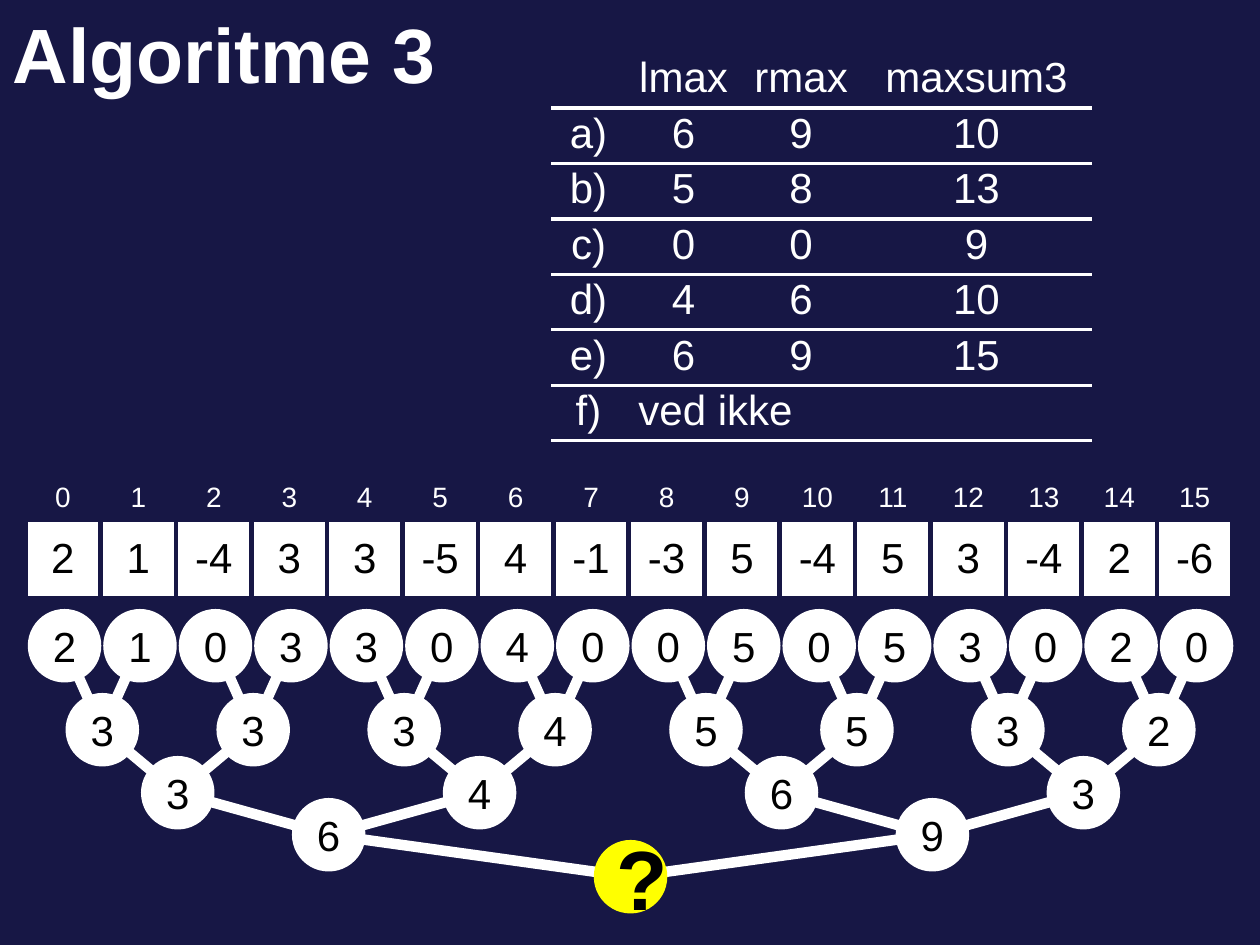
from lxml.etree import SubElement
from pptx import Presentation
from pptx.dml.color import RGBColor
from pptx.enum.shapes import MSO_CONNECTOR as Connector, MSO_SHAPE as Shape
from pptx.enum.text import MSO_ANCHOR as Anchor, PP_ALIGN as Align
from pptx.oxml.ns import qn
from pptx.util import Inches, Pt

NAVY, WHITE, BLACK, YELLOW = "171745", "FFFFFF", "000000", "FFFF00"

ARRAY = [2, 1, -4, 3, 3, -5, 4, -1, -3, 5, -4, 5, 3, -4, 2, -6]
TREE = [
    [max(0, value) for value in ARRAY],
    [3, 3, 3, 4, 5, 5, 3, 2],
    [3, 4, 6, 3],
    [6, 9],
    ["?"],
]
ANSWERS = [
    ["", "lmax", "rmax", "maxsum3"],
    ["a)", 6, 9, 10],
    ["b)", 5, 8, 13],
    ["c)", 0, 0, 9],
    ["d)", 4, 6, 10],
    ["e)", 6, 9, 15],
    ["f)", "ved ikke", "", ""],
]

# Grid units: 120 columns by 90 rows on the slide
ARRAY_LEFT, ARRAY_TOP, ARRAY_WIDTH = 2.4, 42, 115
STEP = ARRAY_WIDTH / len(ARRAY)
NODE = 7
FIRST_CENTER = 6.15
LEVEL_TOPS = [58, 66, 72, 76, 80]


def grid(units):
    return Inches(units / 12)


def color(hex_text):
    return RGBColor.from_string(hex_text)


class SlideBuilder:
    font = "Arial"
    body_size = 24

    def __init__(self, deck, background):
        self.page = deck.slides.add_slide(deck.slide_layouts[5])
        fill = self.page.background.fill
        fill.solid()
        fill.fore_color.rgb = color(background)

    def add_text(self, frame, text, ink, size=body_size, align=Align.CENTER, bold=False):
        para = frame.paragraphs[0]
        para.alignment = align
        span = para.add_run()
        span.text = str(text)
        span.font.name = self.font
        span.font.size = Pt(size)
        span.font.bold = bold
        span.font.color.rgb = color(ink)

    def title(self, text, left, top, width, height):
        box = self.page.shapes.title
        box.left, box.top = grid(left), grid(top)
        box.width, box.height = grid(width), grid(height)
        box.text_frame.vertical_anchor = Anchor.MIDDLE
        self.add_text(box.text_frame, text, WHITE, 44, Align.LEFT, True)

    def group(self):
        return self.page.shapes.add_group_shape().shapes

    def branch(self, shapes, start, end):
        line = shapes.add_connector(Connector.STRAIGHT, *map(grid, (*start, *end)))
        line.line.color.rgb = color(WHITE)
        line.line.width = Pt(6)
        SubElement(line._element.spPr, qn("a:effectLst"))

    def node(self, shapes, center, text, fill=WHITE, **style):
        x, y = center
        circle = shapes.add_shape(
            Shape.OVAL, grid(x - NODE / 2), grid(y - NODE / 2), grid(NODE), grid(NODE))
        circle.shadow.inherit = False
        circle.fill.solid()
        circle.fill.fore_color.rgb = color(fill)
        circle.line.fill.background()
        circle.text_frame.vertical_anchor = Anchor.MIDDLE
        self.add_text(circle.text_frame, text, BLACK, **style)

    def table(self, left, top, widths, row_height, row_count):
        """Add a table without banding, with the given column widths."""
        table = self.page.shapes.add_table(
            row_count, len(widths), grid(left), grid(top),
            grid(sum(widths)), grid(row_height * row_count)).table
        table.first_row = table.horz_banding = False
        for column, width in zip(table.columns, widths):
            column.width = grid(width)
        for row in table.rows:
            row.height = grid(row_height)
        return table

    def cell(self, cell, borders, fill=None, inset=(0.1, 0.05), anchor=Anchor.TOP):
        """Format a cell; borders maps sides (L, R, T, B) to (colour, points)."""
        properties = cell._tc.get_or_add_tcPr()
        for side in "LRTB":
            edge = SubElement(properties, qn(f"a:ln{side}"))
            if side in borders:
                ink, points = borders[side]
                edge.set("w", str(Pt(points)))
                paint = SubElement(edge, qn("a:solidFill"))
                SubElement(paint, qn("a:srgbClr")).set("val", ink)
            else:
                SubElement(edge, qn("a:noFill"))
        if fill:
            cell.fill.solid()
            cell.fill.fore_color.rgb = color(fill)
        else:
            cell.fill.background()
        cell.vertical_anchor = anchor
        cell.margin_left = cell.margin_right = Inches(inset[0])
        cell.margin_top = cell.margin_bottom = Inches(inset[1])


def node_center(level, index):
    x = FIRST_CENTER + STEP * (2 ** level * (index + 0.5) - 0.5)
    return x, LEVEL_TOPS[level] + NODE / 2


def draw_branches(builder):
    shapes = builder.group()
    for level, values in enumerate(TREE[:-1]):
        for index in range(len(values)):
            builder.branch(shapes, node_center(level, index),
                           node_center(level + 1, index // 2))


def draw_array(builder):
    table = builder.table(ARRAY_LEFT, ARRAY_TOP, [STEP] * len(ARRAY), 7.5, 2)
    borders = dict.fromkeys("LRTB", (NAVY, 3))
    for index, value in enumerate(ARRAY):
        label, box = table.cell(0, index), table.cell(1, index)
        builder.cell(label, borders, anchor=Anchor.BOTTOM)
        builder.add_text(label.text_frame, index, WHITE, 16)
        builder.cell(box, borders, WHITE, (0, 0), Anchor.MIDDLE)
        builder.add_text(box.text_frame, value, BLACK)


def draw_nodes(builder):
    shapes = builder.group()
    for level, values in enumerate(TREE):
        for index, value in enumerate(values):
            style = {"fill": YELLOW, "size": 48, "bold": True} if value == "?" else {}
            builder.node(shapes, node_center(level, index), value, **style)


def draw_answers(builder):
    table = builder.table(52.5, 5, [7.1, 11, 11.4, 22], 37 / 7, len(ANSWERS))
    rule = (WHITE, 2.25)
    for row, values in enumerate(ANSWERS):
        borders = {"B": rule, "T": rule} if row else {"B": rule}
        for column, value in enumerate(values):
            cell = table.cell(row, column)
            builder.cell(cell, borders, inset=(0.1, 0.02))
            if value != "":
                align = Align.LEFT if value == "ved ikke" else Align.CENTER
                builder.add_text(cell.text_frame, value, WHITE, align=align)
    last = len(ANSWERS) - 1
    table.cell(last, 1).merge(table.cell(last, 3))


def main():
    deck = Presentation()
    deck.slide_width, deck.slide_height = grid(120), grid(90)
    builder = SlideBuilder(deck, NAVY)
    builder.title("Algoritme 3", 0, 1, 120, 8)
    draw_branches(builder)
    draw_array(builder)
    draw_nodes(builder)
    draw_answers(builder)
    deck.save("out.pptx")


if __name__ == "__main__":
    main()
